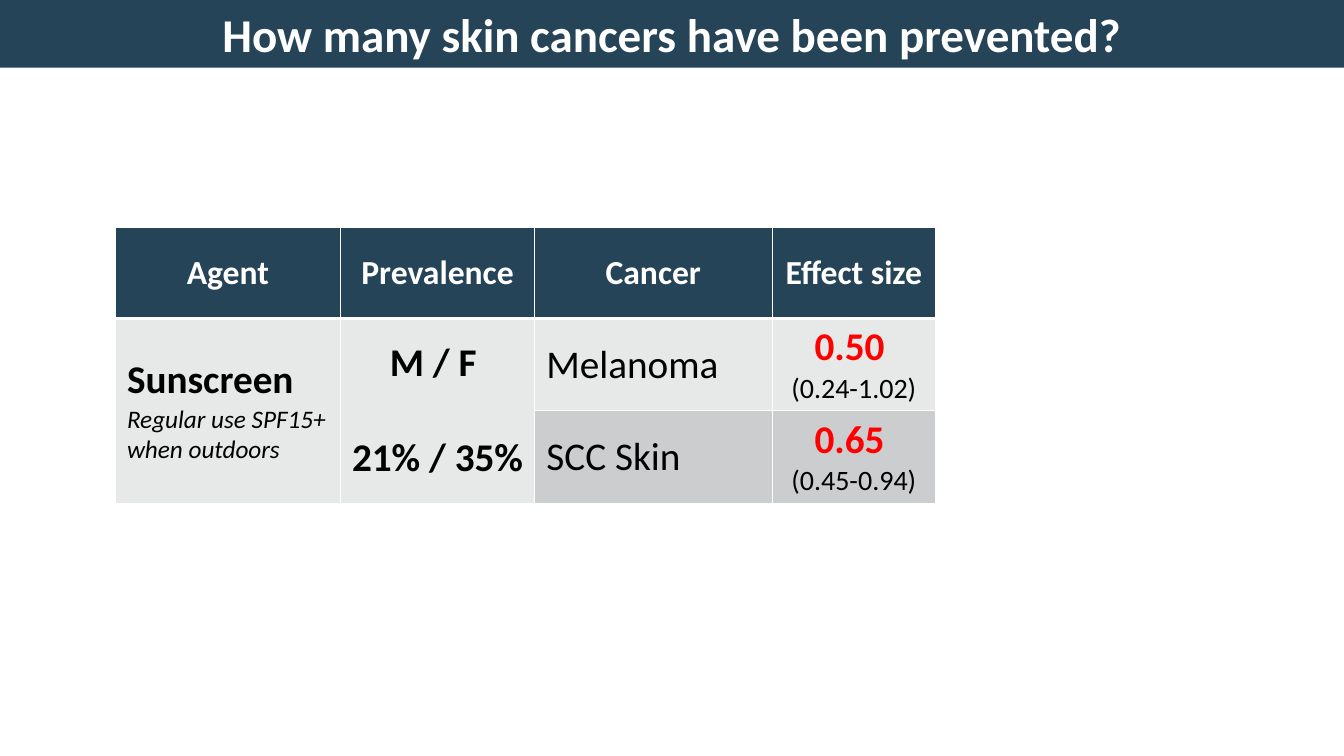
from lxml import etree
from pptx import Presentation
from pptx.dml.color import RGBColor
from pptx.enum import text
from pptx.oxml import ns
from pptx.util import Inches, Pt

FONT = "Calibri"
COLORS = {
    "navy": "264457",
    "white": "FFFFFF",
    "black": "000000",
    "red": "FF0000",
    "light": "E7E8E8",
    "grey": "CCCDCE",
}
HEADERS = ["Agent", "Prevalence", "Cancer", "Effect size"]
COL_WIDTHS = [2.24, 1.92, 2.36, 1.62]
ROW_HEIGHT = 0.9
RESULTS = [
    ("Melanoma", "0.50 ", "(0.24-1.02)", "light"),
    ("SCC Skin", "0.65 ", "(0.45-0.94)", "grey"),
]
CENTER = text.PP_ALIGN.CENTER
LEFT = text.PP_ALIGN.LEFT


def rgb(name):
    return RGBColor.from_string(COLORS[name])


def write(tf, lines, align):
    """Fill a text frame; each line is (text, size, color, bold, italic)."""
    for i, (words, size, color, bold, italic) in enumerate(lines):
        p = tf.paragraphs[0] if i == 0 else tf.add_paragraph()
        p.text = words
        p.alignment = align
        for r in p.runs:
            r.font.name = FONT
            r.font.size = Pt(size)
            r.font.color.rgb = rgb(color)
            r.font.bold = bold
            r.font.italic = italic


def add_borders(cell, top, bottom):
    """Draw white cell borders, with top and bottom widths in points."""
    tc_pr = cell._tc.get_or_add_tcPr()
    widths = {"lnL": 1, "lnR": 1, "lnT": top, "lnB": bottom}
    for i, (tag, width) in enumerate(widths.items()):
        ln = etree.Element(ns.qn(f"a:{tag}"), w=str(Pt(width)))
        fill = etree.SubElement(ln, ns.qn("a:solidFill"))
        etree.SubElement(fill, ns.qn("a:srgbClr"), val=COLORS["white"])
        tc_pr.insert(i, ln)


def fill_cell(cell, lines, fill, align=CENTER, inset=0.12):
    cell.fill.solid()
    cell.fill.fore_color.rgb = rgb(fill)
    cell.vertical_anchor = text.MSO_ANCHOR.MIDDLE
    cell.margin_left = cell.margin_right = Inches(inset)
    write(cell.text_frame, lines, align)


def add_title(s, prs):
    title = s.shapes.title
    title.left = title.top = 0
    title.width, title.height = prs.slide_width, Inches(0.67)
    title.fill.solid()
    title.fill.fore_color.rgb = rgb("navy")
    tf = title.text_frame
    tf.auto_size = text.MSO_AUTO_SIZE.NONE
    tf.vertical_anchor = text.MSO_ANCHOR.MIDDLE
    write(tf, [("How many skin cancers have been prevented?", 33.6, "white", True, False)], CENTER)


def add_effects_table(s):
    rows = len(RESULTS) + 1
    table = s.shapes.add_table(
        rows, len(HEADERS), Inches(1.14), Inches(2.26),
        Inches(sum(COL_WIDTHS)), Inches(rows * ROW_HEIGHT),
    ).table
    table.first_row = table.horz_banding = False
    for column, width in zip(table.columns, COL_WIDTHS):
        column.width = Inches(width)

    for col, header in enumerate(HEADERS):
        inset = 0.06 if header == "Prevalence" else 0.12
        fill_cell(table.cell(0, col), [(header, 24, "white", True, False)], "navy", inset=inset)

    for col in (0, 1):
        table.cell(1, col).merge(table.cell(rows - 1, col))
    fill_cell(table.cell(1, 0), [
        ("Sunscreen", 28, "black", True, False),
        ("Regular use SPF15+ when outdoors", 18, "black", False, True),
    ], "light", LEFT)
    prevalence = table.cell(1, 1)
    fill_cell(prevalence, [
        ("M / F ", 28, "black", True, False),
        ("21% / 35%", 28, "black", True, False),
    ], "light", inset=0.06)
    prevalence.text_frame.paragraphs[1].space_before = Pt(34)

    for row, (cancer, effect, interval, fill) in enumerate(RESULTS, 1):
        fill_cell(table.cell(row, 2), [(cancer, 28, "black", False, False)], fill, LEFT)
        fill_cell(table.cell(row, 3), [
            (effect, 28, "red", True, False),
            (interval, 20, "black", False, False),
        ], fill)

    for row in range(rows):
        for col in range(len(HEADERS)):
            add_borders(table.cell(row, col), 3 if row == 1 else 1, 3 if row == 0 else 1)


def main():
    prs = Presentation()
    prs.slide_width, prs.slide_height = Inches(13.33), Inches(7.5)
    s = prs.slides.add_slide(prs.slide_layouts.get_by_name("Title Only"))
    add_title(s, prs)
    add_effects_table(s)
    prs.save("out.pptx")


if __name__ == "__main__":
    main()
